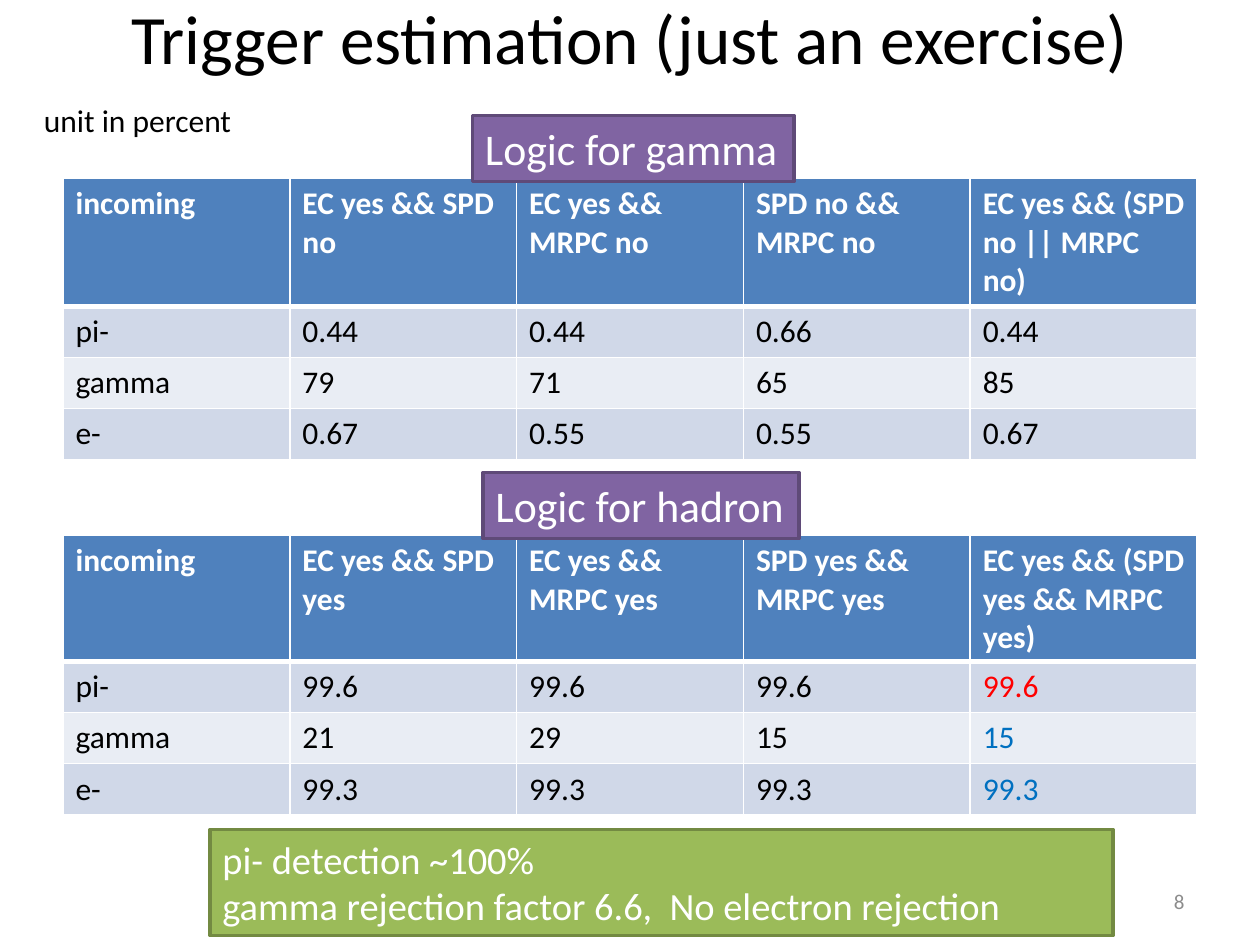
import dataclasses

import pptx
import pptx.dml.color
import pptx.enum.shapes
import pptx.enum.text
import pptx.oxml
import pptx.oxml.ns
import pptx.util

ANCHOR = pptx.enum.text.MSO_ANCHOR
ALIGN = pptx.enum.text.PP_ALIGN
FIT = pptx.enum.text.MSO_AUTO_SIZE


@dataclasses.dataclass(frozen=True)
class Theme:
    """Colours, type sizes and font of the slide."""
    font: str = "Calibri"
    black: str = "000000"
    white: str = "FFFFFF"
    gray: str = "8C8C8C"
    red: str = "FF0000"
    blue: str = "0070C0"
    head: str = "4F81BD"
    bands: tuple = ("D0D8E8", "E9EDF4")
    purple: tuple = ("8064A2", "5F4A78")
    green: tuple = ("9BBB59", "738A42")
    title: float = 39.6
    label: float = 25
    note: float = 22
    body: float = 18
    small: float = 12


THEME = Theme()
GAMMA = [
    ["incoming", "EC yes && SPD no", "EC yes && MRPC no",
     "SPD no && MRPC no", "EC yes && (SPD no || MRPC no)"],
    ["pi-", "0.44", "0.44", "0.66", "0.44"],
    ["gamma", "79", "71", "65", "85"],
    ["e-", "0.67", "0.55", "0.55", "0.67"],
]
HADRON = [
    ["incoming", "EC yes && SPD yes", "EC yes && MRPC yes",
     "SPD yes && MRPC yes", "EC yes && (SPD yes && MRPC yes)"],
    ["pi-", "99.6", "99.6", "99.6", "99.6"],
    ["gamma", "21", "29", "15", "15"],
    ["e-", "99.3", "99.3", "99.3", "99.3"],
]


def grid(*cells):
    """Turn counts of grid cells, twelve to the inch, into lengths."""
    return [pptx.util.Inches(cell / 12) for cell in cells]


def rgb(code):
    """Give the colour for a hex code."""
    return pptx.dml.color.RGBColor.from_string(code)


def style(frame, size, color, bold=False, align=None):
    """Format every run of a text frame."""
    for para in frame.paragraphs:
        if align is not None:
            para.alignment = align
        for run in para.runs:
            run.font.name = THEME.font
            run.font.size = pptx.util.Pt(size)
            run.font.bold = bold
            run.font.color.rgb = rgb(color)


def add_title(slide, text, box):
    """Fill and place the title placeholder."""
    title = slide.shapes.title
    title.left, title.top, title.width, title.height = grid(*box)
    title.text_frame.text = text
    title.text_frame.vertical_anchor = ANCHOR.MIDDLE
    style(title.text_frame, THEME.title, THEME.black, align=ALIGN.CENTER)


def add_text(slide, text, box, size, color, align=ALIGN.LEFT, anchor=ANCHOR.TOP):
    """Add a line of plain text."""
    frame = slide.shapes.add_textbox(*grid(*box)).text_frame
    frame.text = text
    frame.word_wrap = align == ALIGN.RIGHT
    frame.vertical_anchor = anchor
    style(frame, size, color, align=align)


def add_box(slide, text, box, size, colors, wrap=False):
    """Add a filled and outlined box with white text."""
    kind = pptx.enum.shapes.MSO_SHAPE.RECTANGLE
    shape = slide.shapes.add_shape(kind, *grid(*box))
    fill, line = colors
    shape.shadow.inherit = False
    shape.fill.solid()
    shape.fill.fore_color.rgb = rgb(fill)
    shape.line.color.rgb = rgb(line)
    shape.line.width = pptx.util.Pt(2)
    frame = shape.text_frame
    frame.text = text
    frame.word_wrap = wrap
    frame.auto_size = FIT.SHAPE_TO_FIT_TEXT
    frame.vertical_anchor = ANCHOR.TOP
    style(frame, size, THEME.white, align=ALIGN.LEFT)


def add_edges(cell, widths):
    """Draw white left, right, top and bottom borders on a cell."""
    props = cell._tc.get_or_add_tcPr()
    for place, (side, width) in enumerate(zip("LRTB", widths)):
        edge = pptx.oxml.parse_xml(
            f'<a:ln{side} {pptx.oxml.ns.nsdecls("a")} w="{pptx.util.Pt(width)}">'
            f'<a:solidFill><a:srgbClr val="{THEME.white}"/></a:solidFill></a:ln{side}>')
        props.insert(place, edge)


def add_grid(slide, rows, top, marks):
    """Add a banded table, with marked colours by row and column."""
    table = slide.shapes.add_table(
        len(rows), len(rows[0]), *grid(6, top, 108, 26.6)).table
    for index, (line, values) in enumerate(zip(table.rows, rows)):
        head = index == 0
        line.height = grid(12 if head else 4.87)[0]
        back = THEME.head if head else THEME.bands[(index - 1) % 2]
        ink = THEME.white if head else THEME.black
        edges = (1, 1, 3 if index == 1 else 1, 3 if head else 1)
        for col, value in enumerate(values):
            cell = table.cell(index, col)
            cell.text_frame.text = value
            cell.fill.solid()
            cell.fill.fore_color.rgb = rgb(back)
            style(cell.text_frame, THEME.body, marks.get((index, col), ink), head)
            add_edges(cell, edges)


def main():
    """Build the slide and save it."""
    deck = pptx.Presentation()
    deck.slide_width, deck.slide_height = grid(120, 90)
    slide = deck.slides.add_slide(deck.slide_layouts.get_by_name("Title Only"))
    add_title(slide, "Trigger estimation (just an exercise)", (6, -4, 108, 15))
    add_grid(slide, GAMMA, 17, {})
    add_text(slide, "8", (86, 83.4, 28, 4.8), THEME.small, THEME.gray,
             ALIGN.RIGHT, ANCHOR.MIDDLE)
    add_grid(slide, HADRON, 51,
             {(1, 4): THEME.red, (2, 4): THEME.blue, (3, 4): THEME.blue})
    add_box(slide, "Logic for gamma", (45, 11, 30.6, 6.3), THEME.label, THEME.purple)
    add_box(slide, "Logic for hadron", (46, 45, 30.1, 6.3), THEME.label, THEME.purple)
    add_box(slide, "pi- detection ~100%\ngamma rejection factor 6.6,  No electron rejection",
            (20, 79, 86, 10.1), THEME.note, THEME.green, True)
    add_text(slide, "unit in percent", (3, 9, 20.5, 4.8), THEME.body, THEME.black)
    deck.save("out.pptx")


if __name__ == "__main__":
    main()
